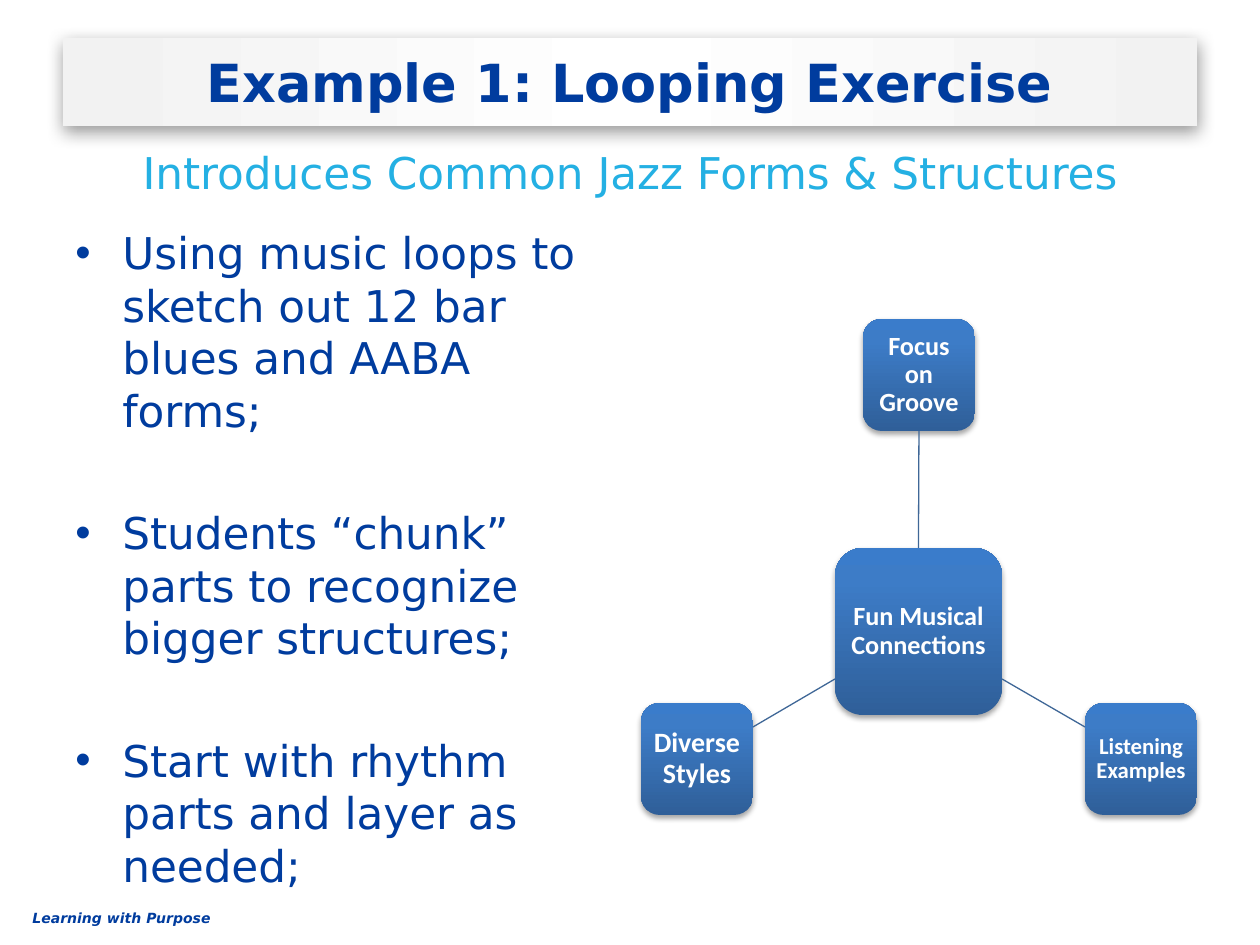
from lxml.etree import SubElement
from pptx import Presentation
from pptx.dml.color import RGBColor
from pptx.enum.shapes import MSO_CONNECTOR as Connector, MSO_SHAPE as Shape
from pptx.enum.text import MSO_ANCHOR as Anchor, PP_ALIGN as Align
from pptx.oxml.ns import qn
from pptx.util import Emu, Pt

SCALE = 914400 / 126
COLORS = {
    "navy": "003C9E", "sky": "24B0E3", "white": "FFFFFF", "grey": "F2F2F2",
    "node_dark": "2F5F99", "node_mid": "3D7CC7", "node_light": "3A7CCB",
    "link": "3F6797", "shadow": "000000",
}
BODY_FONT, NODE_FONT = "DejaVu Sans", "Calibri"
TITLE_STOPS = [(2, "grey"), (50, "white"), (100, "grey")]
NODE_STOPS = [(0, "node_dark"), (80, "node_mid"), (100, "node_light")]
BULLETS = [
    "Using music loops to sketch out 12 bar blues and AABA forms;",
    "Students “chunk” parts to recognize bigger structures;",
    "Start with rhythm parts and layer as needed;",
]


def px(length):
    """Turn pixels into EMU."""
    return Emu(round(length * SCALE))


def rgb(name):
    """Look up a named colour."""
    return RGBColor.from_string(COLORS[name])


def style(para, size, color, name=BODY_FONT, bold=False, italic=False):
    """Set the font of a paragraph."""
    font = para.font
    font.size, font.name, font.bold, font.italic = Pt(size), name, bold, italic
    font.color.rgb = rgb(color)


def add_box(slide, left, top, width, height):
    """Add a wrapping text box and return its text frame."""
    frame = slide.shapes.add_textbox(px(left), px(top), px(width), px(height)).text_frame
    frame.word_wrap = True
    return frame


def add_color(parent, name):
    """Append a colour element."""
    return SubElement(parent, qn("a:srgbClr"), val=COLORS[name])


def add_panel(slide, kind, bounds, stops, angle, shadow):
    """Add a gradient shape with an outer shadow given as opacity, blur, distance."""
    panel = slide.shapes.add_shape(kind, *map(px, bounds))
    panel.line.fill.background()
    panel.fill.gradient()
    panel.fill.gradient_angle = angle
    properties = panel._element.spPr
    stop_list = properties.find(qn("a:gradFill")).find(qn("a:gsLst"))
    for stop in list(stop_list):
        stop_list.remove(stop)
    for position, name in stops:
        add_color(SubElement(stop_list, qn("a:gs"), pos=str(position * 1000)), name)

    panel.shadow.inherit = False
    opacity, blur, distance = shadow
    outer = SubElement(
        properties.find(qn("a:effectLst")), qn("a:outerShdw"),
        blurRad=str(Pt(blur)), dist=str(Pt(distance)), dir="5400000", rotWithShape="0",
    )
    SubElement(add_color(outer, "shadow"), qn("a:alpha"), val=str(opacity * 1000))
    panel.text_frame.word_wrap = True
    panel.text_frame.vertical_anchor = Anchor.MIDDLE
    return panel


def add_title(slide, text):
    """Add the title banner."""
    banner = add_panel(slide, Shape.RECTANGLE, (63, 38, 1134, 88), TITLE_STOPS, 0, (40, 10, 3))
    para = banner.text_frame.paragraphs[0]
    para.text, para.alignment = text, Align.CENTER
    style(para, 30, "navy", bold=True)


def add_subtitle(slide, text):
    """Add the centred line under the banner."""
    frame = add_box(slide, 63, 136, 1134, 73)
    frame.vertical_anchor = Anchor.MIDDLE
    para = frame.paragraphs[0]
    para.text, para.alignment = text, Align.CENTER
    style(para, 25, "sky")


def add_bullets(slide, items):
    """Add the bulleted list."""
    frame = add_box(slide, 63, 220, 557, 693)
    for index, item in enumerate(items):
        para = frame.paragraphs[0] if index == 0 else frame.add_paragraph()
        para.text, para.line_spacing = item, Pt(30)
        if index:
            para.space_before = Pt(40)
        properties = para._p.get_or_add_pPr()
        properties.set("marL", str(px(47)))
        properties.set("indent", str(-px(47)))
        SubElement(properties, qn("a:buFont"), typeface="Arial")
        SubElement(properties, qn("a:buChar"), char="•")
        style(para, 25, "navy")


def add_footer(slide, text):
    """Add the motto at the bottom left."""
    para = add_box(slide, 20, 903, 465, 30).paragraphs[0]
    para.text = text
    style(para, 8, "navy", bold=True, italic=True)


def add_node(slide, text, left, top, side, size):
    """Add a rounded square of the diagram."""
    bounds = (left, top, side, side)
    node = add_panel(slide, Shape.ROUNDED_RECTANGLE, bounds, NODE_STOPS, 90, (35, 3.1, 1.8))
    frame = node.text_frame
    frame.margin_left = frame.margin_right = frame.margin_top = frame.margin_bottom = px(5)
    para = frame.paragraphs[0]
    para.text, para.alignment, para.line_spacing = text, Align.CENTER, 0.9
    style(para, size, "white", NODE_FONT, bold=True)
    return node


def add_link(slide, *ends):
    """Add a thin straight line between two points."""
    link = slide.shapes.add_connector(Connector.STRAIGHT, *map(px, ends))
    link.line.color.rgb, link.line.width = rgb("link"), Pt(0.75)
    SubElement(link._element.spPr, qn("a:effectLst"))
    return link


def add_diagram(slide):
    """Add the hub, its three satellites and the links between them."""
    hub = add_node(slide, "Fun Musical Connections", 835, 548, 167, 15)
    groove = add_node(slide, "Focus on Groove", 863, 319, 112, 15)
    add_node(slide, "Listening Examples", 1085, 703, 112, 13)
    add_node(slide, "Diverse Styles", 641, 703, 112, 16)
    upright = add_link(slide, 919, 548, 919, 431)
    upright.begin_connect(hub, 0)
    upright.end_connect(groove, 2)
    add_link(slide, 1002, 679, 1085, 727)
    add_link(slide, 835, 679, 753, 727)


def main():
    """Build and save the slide."""
    deck = Presentation()
    deck.slide_width, deck.slide_height = px(1260), px(945)
    slide = deck.slides.add_slide(deck.slide_layouts[6])
    add_footer(slide, "Learning with Purpose")
    add_bullets(slide, BULLETS)
    add_diagram(slide)
    add_title(slide, "Example 1: Looping Exercise")
    add_subtitle(slide, "Introduces Common Jazz Forms & Structures")
    deck.save("out.pptx")


if __name__ == "__main__":
    main()
